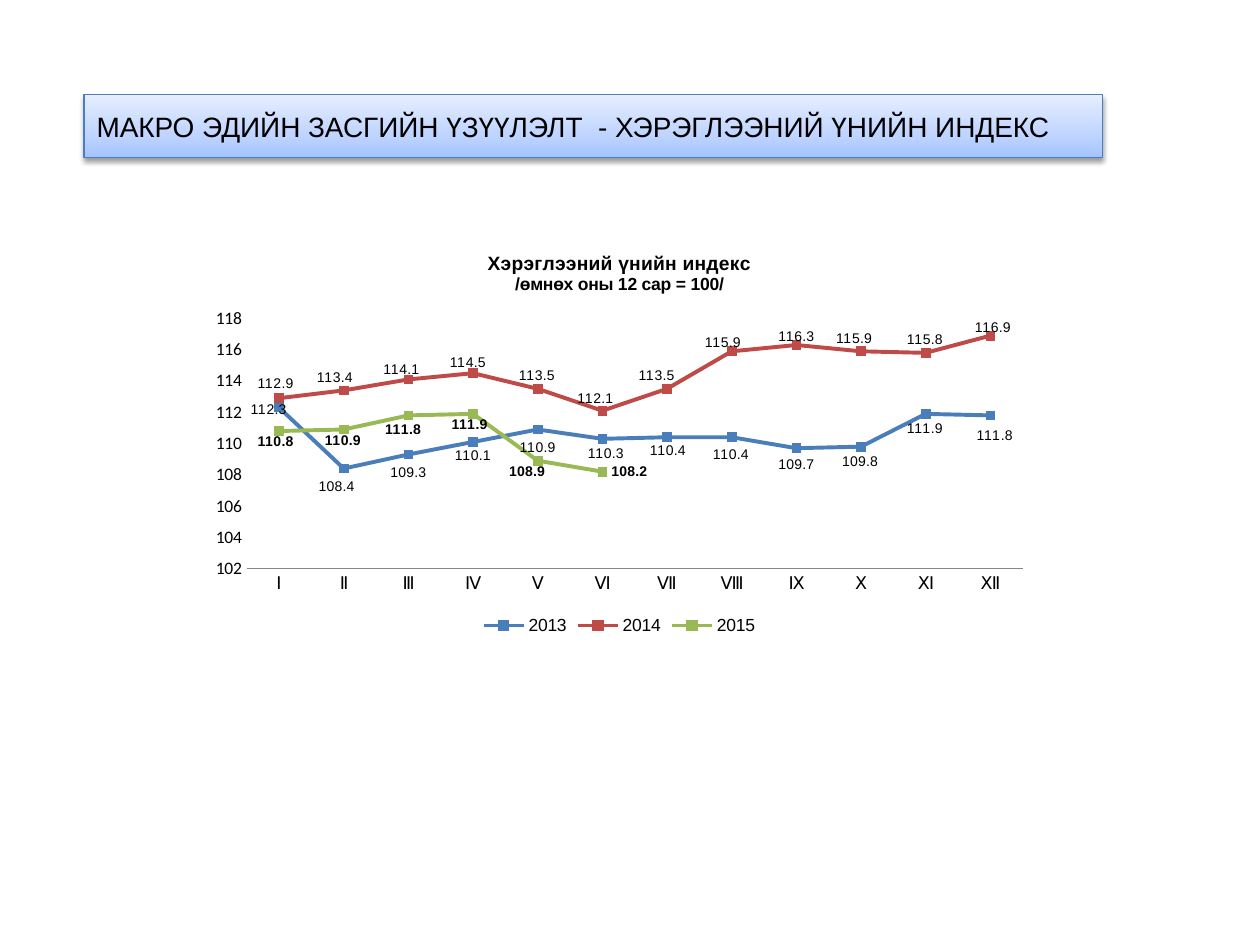
from copy import deepcopy

from lxml import etree
from pptx import Presentation
from pptx.chart.data import CategoryChartData
from pptx.dml.color import RGBColor
from pptx.enum.chart import (XL_CHART_TYPE, XL_LABEL_POSITION, XL_LEGEND_POSITION,
                             XL_MARKER_STYLE, XL_TICK_MARK)
from pptx.enum.text import MSO_ANCHOR, MSO_AUTO_SIZE, PP_ALIGN
from pptx.oxml import parse_xml
from pptx.oxml.ns import nsdecls, qn
from pptx.util import Pt

LINE_MARKERS = XL_CHART_TYPE.LINE_MARKERS
CENTER = XL_LABEL_POSITION.CENTER
LEGEND_BOTTOM = XL_LEGEND_POSITION.BOTTOM
NO_TICK = XL_TICK_MARK.NONE
SQUARE = XL_MARKER_STYLE.SQUARE
MIDDLE = MSO_ANCHOR.MIDDLE
NO_AUTOFIT = MSO_AUTO_SIZE.NONE
LEFT = PP_ALIGN.LEFT

BLACK = RGBColor(0x00, 0x00, 0x00)
BANNER_LINE = RGBColor(0x4B, 0x7E, 0xBC)
AXIS_GRAY = RGBColor(0x86, 0x86, 0x86)
BLUE = RGBColor(0x4A, 0x7E, 0xBB)
RED = RGBColor(0xBE, 0x4B, 0x48)
GREEN = RGBColor(0x98, 0xB9, 0x54)
BANNER_STOPS = [(0, RGBColor(0xA4, 0xC4, 0xFF)),
                (0.35, RGBColor(0xBF, 0xD4, 0xFF)),
                (1, RGBColor(0xE6, 0xEE, 0xFF))]

TITLE = "МАКРО ЭДИЙН ЗАСГИЙН ҮЗҮҮЛЭЛТ  - ХЭРЭГЛЭЭНИЙ ҮНИЙН ИНДЕКС"
CHART_TITLE = [("Хэрэглээний үнийн индекс", 11), ("/өмнөх оны 12 сар = 100/", 10)]
MONTHS = ["Ⅰ", "Ⅱ", "Ⅲ", "Ⅳ", "Ⅴ", "Ⅵ", "Ⅶ", "Ⅷ", "Ⅸ", "Ⅹ", "Ⅺ", "Ⅻ"]

# Each label offset is (right, down) in points from its marker.
SERIES = [
    {"name": "2013", "color": BLUE, "bold": False,
     "values": [112.3, 108.4, 109.3, 110.1, 110.9, 110.3,
                110.4, 110.4, 109.7, 109.8, 111.9, 111.8],
     "offsets": [(-6, 1), (-4, 10), (0, 10), (0, 7.5), (0, 10), (2, 8.5),
                 (0.5, 7.5), (-0.5, 10), (0, 9), (-0.5, 8.5), (-0.5, 8.5), (2.5, 11.5)]},
    {"name": "2014", "color": RED, "bold": False,
     "values": [112.9, 113.4, 114.1, 114.5, 113.5, 112.1,
                113.5, 115.9, 116.3, 115.9, 115.8, 116.9],
     "offsets": [(-2, -8.5), (-5, -7.5), (-4, -6), (-3, -6), (-0.5, -8), (-4, -7),
                 (-6, -8), (-5, -5), (0, -5), (-4, -7.5), (-0.5, -8), (1.5, -5)]},
    {"name": "2015", "color": GREEN, "bold": True,
     "values": [110.8, 110.9, 111.8, 111.9, 108.9, 108.2] + [None] * 6,
     "offsets": [(-2, 6), (-0.5, 6), (-3, 8), (-2, 6), (-6, 6), (15.5, 0)]},
]

BANNER_BOX = (48, 54, 582, 36)
CHART_BOX = (114, 132, 480, 234)
PLOT_BOX = (27, 50, 443.5, 143)  # within the chart
CHART_WIDTH, CHART_HEIGHT = CHART_BOX[2:]


def set_font(font, size, bold=False, name="Arial"):
    font.name, font.size, font.bold = name, Pt(size), bold
    font.color.rgb = BLACK


def manual_layout(**settings):
    """Return a c:layout element; the order of settings is the schema's order."""
    layout = parse_xml(f"<c:layout {nsdecls('c')}><c:manualLayout/></c:layout>")
    for tag, value in settings.items():
        etree.SubElement(layout[0], qn(f"c:{tag}")).set("val", str(value))
    return layout


def format_banner(shape):
    shape.left, shape.top, shape.width, shape.height = map(Pt, BANNER_BOX)
    shape.fill.gradient()
    shape.fill.gradient_angle = 90
    stops = shape._element.spPr.find(f".//{qn('a:gsLst')}")
    stops.insert(1, deepcopy(stops[0]))
    for stop, (position, color) in zip(shape.fill.gradient_stops, BANNER_STOPS):
        stop.position = position
        stop.color.rgb = color
    shape.line.color.rgb = BANNER_LINE
    shape.line.width = Pt(0.75)
    shape.shadow.inherit = False
    shape._element.spPr.find(qn("a:effectLst")).append(parse_xml(
        f'<a:outerShdw {nsdecls("a")} blurRad="{Pt(3.1)}" dist="{Pt(1.6)}" dir="5400000" '
        'rotWithShape="0"><a:srgbClr val="000000"><a:alpha val="38000"/></a:srgbClr>'
        '</a:outerShdw>'))
    frame = shape.text_frame
    frame.word_wrap = True
    frame.auto_size = NO_AUTOFIT
    frame.vertical_anchor = MIDDLE
    paragraph = frame.paragraphs[0]
    paragraph.alignment = LEFT
    run = paragraph.add_run()
    run.text = TITLE
    set_font(run.font, 16)


def format_chart_title(chart):
    frame = chart.chart_title.text_frame
    chart.chart_title.include_in_layout = False
    for index, (text, size) in enumerate(CHART_TITLE):
        paragraph = frame.add_paragraph() if index else frame.paragraphs[0]
        run = paragraph.add_run()
        run.text = text
        set_font(run.font, size, bold=True)


def format_axes(chart):
    category_axis, value_axis = chart.category_axis, chart.value_axis
    for axis in (category_axis, value_axis):
        axis.major_tick_mark = axis.minor_tick_mark = NO_TICK
        axis.has_major_gridlines = False
    set_font(category_axis.tick_labels.font, 10)
    category_axis.format.line.color.rgb = AXIS_GRAY
    set_font(value_axis.tick_labels.font, 10, name="Calibri")
    value_axis.tick_labels.number_format = "0"
    value_axis.tick_labels.number_format_is_linked = False
    value_axis.minimum_scale, value_axis.maximum_scale = 102, 118
    value_axis.major_unit = 2
    value_axis.format.line.fill.background()


def format_labels(series, item):
    labels = series.data_labels
    labels.show_value = True
    set_font(labels.font, 8, item["bold"])
    for index in range(len(item["offsets"])):
        label = series.points[index].data_label
        set_font(label.font, 8, item["bold"])
        label.position = CENTER
    for element, (right, down) in zip(labels._element.findall(qn("c:dLbl")), item["offsets"]):
        element.insert(1, manual_layout(x=right / CHART_WIDTH, y=down / CHART_HEIGHT))
    for leader_lines in labels._element.findall(qn("c:showLeaderLines")):
        leader_lines.set("val", "0")


def format_series(series, item):
    series.smooth = False
    series.format.line.color.rgb = item["color"]
    series.format.line.width = Pt(2.25)
    marker = series.marker
    marker.style, marker.size = SQUARE, 5
    marker.format.fill.solid()
    marker.format.fill.fore_color.rgb = item["color"]
    marker.format.line.color.rgb = item["color"]
    format_labels(series, item)


def add_index_chart(slide):
    data = CategoryChartData(number_format="0.0")
    data.categories = MONTHS
    for item in SERIES:
        data.add_series(item["name"], item["values"])
    chart = slide.shapes.add_chart(LINE_MARKERS, *map(Pt, CHART_BOX), data).chart
    set_font(chart.font, 10, name="Calibri")
    format_chart_title(chart)
    format_axes(chart)
    chart.plots[0].vary_by_categories = False
    for series, item in zip(chart.plots[0].series, SERIES):
        format_series(series, item)
    chart.has_legend = True
    chart.legend.position = LEGEND_BOTTOM
    chart.legend.include_in_layout = False
    set_font(chart.legend.font, 10)

    plot_area = chart._chartSpace.find(f".//{qn('c:plotArea')}")
    for old in plot_area.findall(qn("c:layout")):
        plot_area.remove(old)
    left, top, width, height = PLOT_BOX
    plot_area.insert(0, manual_layout(
        layoutTarget="inner", xMode="edge", yMode="edge",
        x=left / CHART_WIDTH, y=top / CHART_HEIGHT,
        w=width / CHART_WIDTH, h=height / CHART_HEIGHT))


def main():
    presentation = Presentation()
    presentation.slide_width, presentation.slide_height = Pt(720), Pt(540)
    slide = presentation.slides.add_slide(presentation.slide_layouts[5])
    format_banner(slide.shapes.title)
    add_index_chart(slide)
    presentation.save("out.pptx")


if __name__ == "__main__":
    main()
